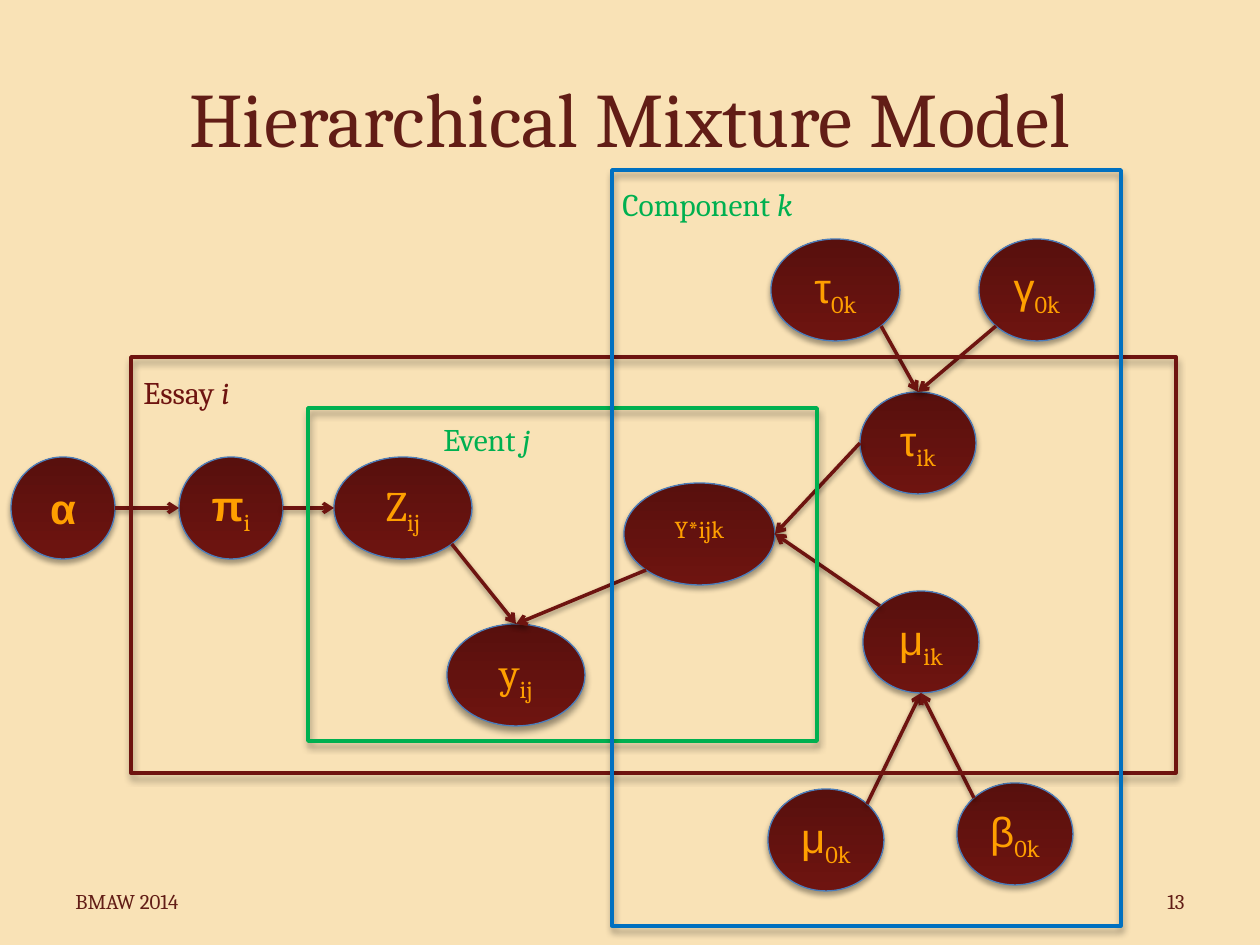
import math

import pptx
import pptx.dml.color
import pptx.enum.shapes
import pptx.enum.text
import pptx.oxml
import pptx.oxml.ns
import pptx.util

RGBColor = pptx.dml.color.RGBColor
SHAPE = pptx.enum.shapes.MSO_SHAPE
ALIGN = pptx.enum.text.PP_ALIGN
ANCHOR = pptx.enum.text.MSO_ANCHOR

CREAM = RGBColor(0xF9, 0xE2, 0xB6)
BROWN = RGBColor(0x62, 0x1D, 0x16)
MAROON = RGBColor(0x6E, 0x14, 0x10)
DARK_MAROON = RGBColor(0x58, 0x10, 0x0D)
ORANGE = RGBColor(0xFF, 0x9F, 0x00)
STEEL = RGBColor(0x4B, 0x7E, 0xBC)
GREEN = RGBColor(0x00, 0xB0, 0x50)
BLUE = RGBColor(0x00, 0x70, 0xC0)

PX_PER_INCH = 126
SERIF, SANS = "Cambria", "Arial"
NODE_HEIGHT = 102
SUBSCRIPT, SUPERSCRIPT = -25, 30

# Shadows: opacity %, blur pt, distance pt, direction in degrees
NODE_SHADOW = (35, 3.1, 1.8, 90)
DEEP_SHADOW = (40, 4, 3, 90)
PLATE_SHADOW = (40, 4, 3, 80)
ARROW_SHADOW = (38, 3.1, 1.6, 90)

# Points on a node's rim, in degrees clockwise from the right
SITES = {"right": 0, "bottom right": 45, "bottom": 90, "bottom left": 135,
         "left": 180, "top left": 225, "top": 270, "top right": 315}


def px(*lengths):
    return [pptx.util.Emu(round(length * 914400 / PX_PER_INCH)) for length in lengths]


def add_run(paragraph, text, *, size, color, font=SERIF, bold=False, italic=False, baseline=0):
    run = paragraph.add_run()
    run.text = text
    run.font.name = font
    run.font.size = pptx.util.Pt(size)
    run.font.bold = bold
    run.font.italic = italic
    run.font.color.rgb = color
    if baseline:
        run._r.get_or_add_rPr().set("baseline", str(baseline * 1000))


def add_shadow(shape, opacity, blur, distance, direction):
    shape._element.spPr.append(pptx.oxml.parse_xml(
        f'<a:effectLst {pptx.oxml.ns.nsdecls("a")}>'
        f'<a:outerShdw blurRad="{pptx.util.Pt(blur)}" dist="{pptx.util.Pt(distance)}" '
        f'dir="{direction * 60000}" rotWithShape="0"><a:srgbClr val="000000">'
        f'<a:alpha val="{opacity * 1000}"/></a:srgbClr></a:outerShdw></a:effectLst>'))


class Diagram:
    def __init__(self, slide):
        self.slide = slide
        self.nodes = {}

    def title(self, text, box):
        shape = self.slide.shapes.title
        shape.left, shape.top, shape.width, shape.height = px(*box)
        shape.text_frame.vertical_anchor = ANCHOR.MIDDLE
        paragraph = shape.text_frame.paragraphs[0]
        paragraph.alignment = ALIGN.CENTER
        add_run(paragraph, text, size=44, color=BROWN)

    def label(self, box, text, variable="", *, size=18, color=BROWN,
              align=ALIGN.LEFT, anchor=ANCHOR.TOP):
        frame = self.slide.shapes.add_textbox(*px(*box)).text_frame
        frame.word_wrap = True
        frame.vertical_anchor = anchor
        paragraph = frame.paragraphs[0]
        paragraph.alignment = align
        add_run(paragraph, text, size=size, color=color)
        if variable:
            add_run(paragraph, variable, size=size, color=color, italic=True)

    def node(self, name, left, top, width, symbol, index="", *, shadow=NODE_SHADOW, **style):
        box = (left, top, width, NODE_HEIGHT)
        self.nodes[name] = box
        shape = self.slide.shapes.add_shape(SHAPE.OVAL, *px(*box))
        shape.fill.gradient()
        shape.fill.gradient_angle = 90
        for stop, color in zip(shape.fill.gradient_stops, (MAROON, DARK_MAROON)):
            stop.color.rgb = color
        shape.line.color.rgb = STEEL
        shape.line.width = pptx.util.Pt(0.75)
        add_shadow(shape, *shadow)
        shape.text_frame.vertical_anchor = ANCHOR.MIDDLE
        paragraph = shape.text_frame.paragraphs[0]
        paragraph.alignment = ALIGN.CENTER
        add_run(paragraph, symbol, size=24, color=ORANGE, **style)
        if index:
            add_run(paragraph, index, size=24, color=ORANGE, baseline=SUBSCRIPT)

    def rim(self, name, site):
        left, top, width, height = self.nodes[name]
        angle = math.radians(SITES[site])
        return (left + width / 2 * (1 + math.cos(angle)),
                top + height / 2 * (1 + math.sin(angle)))

    def arrow(self, start, start_site, end, end_site):
        points = px(*self.rim(start, start_site), *self.rim(end, end_site))
        connector = self.slide.shapes.add_connector(
            pptx.enum.shapes.MSO_CONNECTOR.STRAIGHT, *points)
        connector.line.color.rgb = MAROON
        connector.line.width = pptx.util.Pt(2)
        line = connector._element.spPr.find(pptx.oxml.ns.qn("a:ln"))
        line.append(pptx.oxml.parse_xml(
            f'<a:tailEnd {pptx.oxml.ns.nsdecls("a")} type="arrow"/>'))
        add_shadow(connector, *ARROW_SHADOW)

    def plate(self, box, color):
        shape = self.slide.shapes.add_shape(SHAPE.RECTANGLE, *px(*box))
        shape.fill.background()
        shape.line.color.rgb = color
        shape.line.width = pptx.util.Pt(2)
        add_shadow(shape, *PLATE_SHADOW)


def main():
    presentation = pptx.Presentation()
    presentation.slide_width, presentation.slide_height = px(1260, 945)
    slide = presentation.slides.add_slide(presentation.slide_layouts[5])
    slide.background.fill.solid()
    slide.background.fill.fore_color.rgb = CREAM
    diagram = Diagram(slide)

    # Title and footer
    diagram.title("Hierarchical Mixture Model", (63, 38, 1134, 158))
    diagram.label((63, 876, 294, 50), "BMAW 2014", size=12, anchor=ANCHOR.MIDDLE)
    diagram.label((903, 876, 294, 50), "13", size=12, align=ALIGN.RIGHT, anchor=ANCHOR.MIDDLE)

    # Variables of the model
    diagram.node("pi", 179, 457, 104, "π", "i", font=SANS, bold=True)
    diagram.node("mu ik", 863, 591, 116, "μ", "ik", font=SANS)
    diagram.node("tau ik", 860, 392, 116, "τ", "ik", font=SANS)
    diagram.node("mu 0k", 768, 789, 116, "μ", "0k", font=SANS)
    diagram.node("beta 0k", 957, 783, 116, "β", "0k", font=SANS)
    diagram.node("alpha", 11, 457, 104, "α", font=SANS, bold=True)
    diagram.node("tau 0k", 771, 239, 129, "τ", "0k", font=SANS)
    diagram.node("gamma 0k", 979, 239, 116, "γ", "0k", font=SANS)
    diagram.node("Y star", 624, 483, 151, "Y*ijk", baseline=SUPERSCRIPT)
    diagram.node("Z", 334, 457, 138, "Z", "ij")
    diagram.node("y", 447, 624, 138, "y", "ij", shadow=DEEP_SHADOW)

    # Dependencies
    for dependency in (
        ("Z", "bottom right", "y", "top"),
        ("Y star", "bottom left", "y", "top"),
        ("tau ik", "left", "Y star", "right"),
        ("mu ik", "top left", "Y star", "right"),
        ("pi", "right", "Z", "left"),
        ("alpha", "right", "pi", "left"),
        ("tau 0k", "bottom right", "tau ik", "top"),
        ("gamma 0k", "bottom left", "tau ik", "top"),
        ("mu 0k", "top right", "mu ik", "bottom"),
        ("beta 0k", "top left", "mu ik", "bottom"),
    ):
        diagram.arrow(*dependency)

    # Plates and their labels
    diagram.plate((131, 357, 1045, 416), MAROON)
    diagram.plate((308, 408, 509, 333), GREEN)
    diagram.plate((612, 170, 509, 756), BLUE)
    diagram.label((131, 367, 178, 51), "Essay ", "i", color=MAROON)
    diagram.label((431, 414, 178, 51), "Event ", "j", color=GREEN)
    diagram.label((610, 179, 219, 51), "Component ", "k", color=GREEN)

    presentation.save("out.pptx")


if __name__ == "__main__":
    main()
